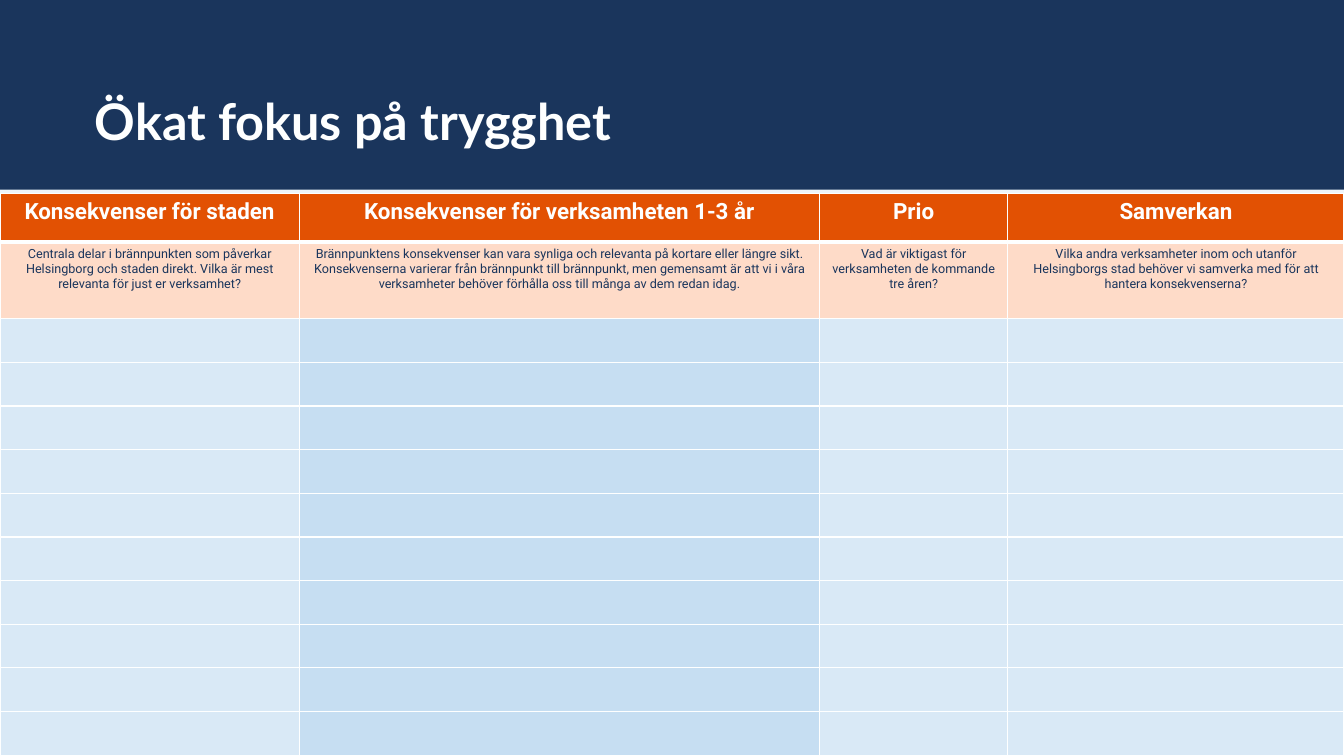
from lxml.etree import SubElement
from pptx import Presentation
from pptx.dml.color import RGBColor
from pptx.enum.shapes import MSO_SHAPE as Shape
from pptx.enum.text import MSO_ANCHOR as Anchor, PP_ALIGN as Align
from pptx.oxml import parse_xml
from pptx.oxml.ns import nsdecls, qn
from pptx.util import Cm, Pt

WIDTH, HEIGHT = 33.87, 19.05
NAVY, WHITE, ORANGE, PEACH = "1A355C", "FEFFFF", "E25103", "FEDBC8"
SKY, BACKGROUND = "C6DEF2", "EEF5FB"

COLUMN_WIDTHS = [7.54, 13.11, 4.75, 8.47]
HEADER_HEIGHT, GUIDE_HEIGHT, ENTRY_HEIGHT = 1.22, 1.93, 1.1
ENTRY_ROWS = 10
HEADERS = [
    "Konsekvenser för staden",
    "Konsekvenser för verksamheten 1-3 år",
    "Prio",
    "Samverkan",
]
GUIDES = [
    "Centrala delar i brännpunkten som påverkar Helsingborg och staden direkt. "
    "Vilka är mest relevanta för just er verksamhet?",
    "Brännpunktens konsekvenser kan vara synliga och relevanta på kortare eller "
    "längre sikt. Konsekvenserna varierar från brännpunkt till brännpunkt, men "
    "gemensamt är att vi i våra verksamheter behöver förhålla oss till många av "
    "dem redan idag.",
    "Vad är viktigast för verksamheten de kommande tre åren?",
    "Vilka andra verksamheter inom och utanför Helsingborgs stad behöver vi "
    "samverka med för att hantera konsekvenserna?",
]


def color(value):
    return RGBColor.from_string(value)


class SlideBuilder:
    title_font, body_font = "Lato", "Roboto"

    def __init__(self, slide):
        self.slide = slide

    def background(self, fill):
        self.paint(self.slide.background, fill)

    def paint(self, target, fill, opacity=100):
        target.fill.solid()
        target.fill.fore_color.rgb = color(fill)
        if opacity < 100:
            color_element = next(target._tc.iter(qn("a:srgbClr")))
            SubElement(color_element, qn("a:alpha"), val=str(opacity * 1000))

    def set_text(self, paragraph, text, font, size, text_color, bold=False):
        paragraph.text = text
        paragraph.font.name = font
        paragraph.font.size = Pt(size)
        paragraph.font.bold = bold
        paragraph.font.color.rgb = color(text_color)

    def band(self, left, top, width, height, fill):
        shape = self.slide.shapes.add_shape(
            Shape.RECTANGLE, Cm(left), Cm(top), Cm(width), Cm(height))
        shape.shadow.inherit = False
        shape.line.fill.background()
        self.paint(shape, fill)

    def title(self, text, left, top, width, height):
        box = self.slide.shapes.add_textbox(Cm(left), Cm(top), Cm(width), Cm(height))
        frame = box.text_frame
        frame.word_wrap = True
        frame.vertical_anchor = Anchor.BOTTOM
        frame.margin_left = frame.margin_right = 0
        frame.margin_top = frame.margin_bottom = 0
        paragraph = frame.paragraphs[0]
        paragraph.line_spacing = 0.9
        self.set_text(paragraph, text, self.title_font, 36, WHITE, bold=True)

    def table(self, left, top, column_widths, row_heights):
        table = self.slide.shapes.add_table(
            len(row_heights), len(column_widths), Cm(left), Cm(top),
            Cm(sum(column_widths)), Cm(sum(row_heights))).table
        for column, width in zip(table.columns, column_widths):
            column.width = Cm(width)
        for row, height in zip(table.rows, row_heights):
            row.height = Cm(height)
        return table

    def cell(self, cell, fill, text="", size=9, text_color=NAVY, bold=False,
             opacity=100, top_border=1, bottom_border=1):
        self.paint(cell, fill, opacity)
        self.borders(cell, L=1, R=1, T=top_border, B=bottom_border)
        paragraph = cell.text_frame.paragraphs[0]
        paragraph.alignment = Align.CENTER
        self.set_text(paragraph, text, self.body_font, size, text_color, bold)

    def borders(self, cell, **widths):
        """Draw white cell borders; widths are points keyed by side."""
        properties = cell._tc.get_or_add_tcPr()
        for index, (side, width) in enumerate(widths.items()):
            properties.insert(index, parse_xml(
                f'<a:ln{side} {nsdecls("a")} w="{Pt(width)}"><a:solidFill>'
                f'<a:srgbClr val="{WHITE}"/></a:solidFill></a:ln{side}>'))


def main():
    presentation = Presentation()
    presentation.slide_width, presentation.slide_height = Cm(WIDTH), Cm(HEIGHT)
    builder = SlideBuilder(presentation.slides.add_slide(presentation.slide_layouts[6]))

    builder.background(BACKGROUND)
    builder.band(0, 0, WIDTH, 4.78, NAVY)
    builder.title("Ökat fokus på trygghet", 2.39, 0.61, 25.4, 3.2)

    row_heights = [HEADER_HEIGHT, GUIDE_HEIGHT] + [ENTRY_HEIGHT] * ENTRY_ROWS
    table = builder.table(0, 4.88, COLUMN_WIDTHS, row_heights)
    for column, (header, guide) in enumerate(zip(HEADERS, GUIDES)):
        builder.cell(table.cell(0, column), ORANGE, header, 16, WHITE,
                     bold=True, bottom_border=3)
        builder.cell(table.cell(1, column), PEACH, guide, top_border=3)
        opacity = 100 if column == 1 else 50
        for row in range(2, len(row_heights)):
            builder.cell(table.cell(row, column), SKY, opacity=opacity)

    presentation.save("out.pptx")


if __name__ == "__main__":
    main()
